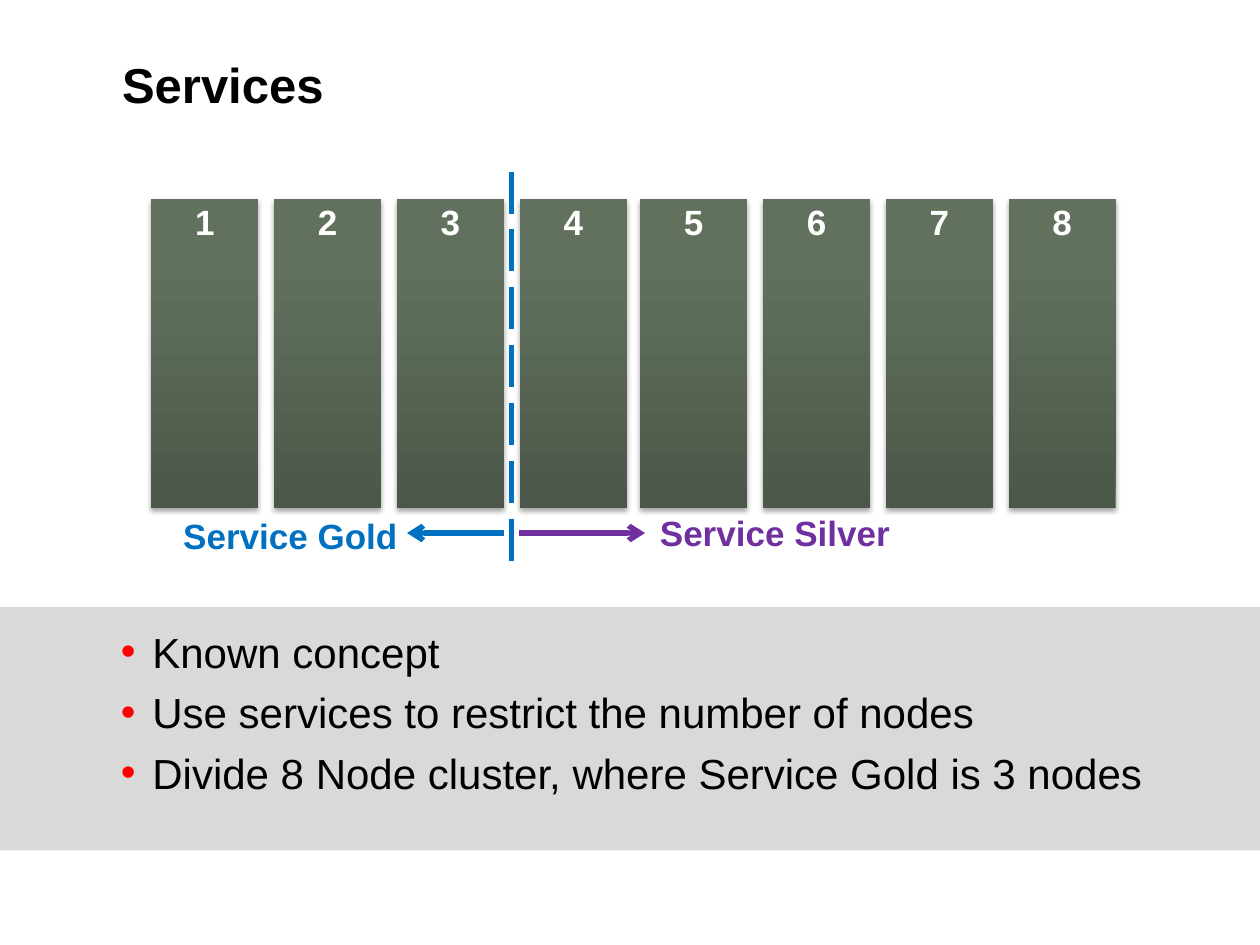
import copy
import dataclasses

import lxml.etree
import pptx
import pptx.dml.color
import pptx.enum.dml
import pptx.enum.shapes
import pptx.enum.text
import pptx.oxml.ns
import pptx.util

Pt = pptx.util.Pt
RGB = pptx.dml.color.RGBColor.from_string
qn = pptx.oxml.ns.qn
Align = pptx.enum.text.PP_ALIGN
Anchor = pptx.enum.text.MSO_ANCHOR
Dash = pptx.enum.dml.MSO_LINE
RECT = pptx.enum.shapes.MSO_SHAPE.RECTANGLE
LINE = pptx.enum.shapes.MSO_CONNECTOR.STRAIGHT


@dataclasses.dataclass(frozen=True)
class Theme:
    font: str = "Arial"
    black: str = "000000"
    white: str = "FFFFFF"
    band: str = "D9D9D9"
    red: str = "FF0000"
    gold: str = "0070C0"
    silver: str = "7030A0"
    shade: tuple = ((0, "4B5748"), (0.8, "62715E"), (1, "62725E"))
    head: int = 28
    body: int = 24
    label: int = 20
    stroke: int = 3


@dataclasses.dataclass(frozen=True)
class Box:
    left: float
    top: float
    width: float
    height: float

    def points(self) -> tuple:
        return Pt(self.left), Pt(self.top), Pt(self.width), Pt(self.height)


@dataclasses.dataclass(frozen=True)
class Rule:
    start: tuple
    end: tuple
    color: str
    dashed: bool = False


@dataclasses.dataclass(frozen=True)
class Label:
    text: str
    box: Box
    color: str


THEME = Theme()
POINTS = (
    "Known concept",
    "Use services to restrict the number of nodes",
    "Divide 8 Node cluster, where Service Gold is 3 nodes",
)
RULES = (
    Rule((292.3, 320.4), (292.3, 92.2), THEME.gold, True),
    Rule((288, 304.6), (232.6, 304.6), THEME.gold),
    Rule((296.6, 304.6), (368.6, 304.6), THEME.silver),
)
LABELS = (
    Label("Service Gold", Box(97.2, 293, 137.5, 28.8), THEME.gold),
    Label("Service Silver", Box(369.4, 291.6, 146.9, 28.8), THEME.silver),
)
NODES = 8
HALF = NODES // 2
STARTS = (86.4, 365.8)
PITCH = 70.2


def add_run(para, text: str, size: int, color: str, bold: bool = True) -> None:
    run = para.add_run()
    run.text = text
    run.font.name = THEME.font
    run.font.size = Pt(size)
    run.font.bold = bold
    run.font.color.rgb = RGB(color)


def no_inset(frame) -> None:
    frame.margin_left = frame.margin_right = Pt(0)
    frame.margin_top = frame.margin_bottom = Pt(0)


def add_title(slide, text: str) -> None:
    title = slide.shapes.title
    title.left, title.top, title.width, title.height = Box(69.8, 31, 596.9, 67.7).points()
    frame = title.text_frame
    no_inset(frame)
    frame.vertical_anchor = Anchor.TOP
    para = frame.paragraphs[0]
    para.alignment = Align.LEFT
    add_run(para, text, THEME.head, THEME.black)


def add_band(slide, box: Box) -> None:
    band = slide.shapes.add_shape(RECT, *box.points())
    band.shadow.inherit = False
    band.fill.solid()
    band.fill.fore_color.rgb = RGB(THEME.band)
    band.line.fill.background()


def add_list(slide, box: Box) -> None:
    frame = slide.shapes.add_textbox(*box.points()).text_frame
    frame.word_wrap = True
    no_inset(frame)
    for i, text in enumerate(POINTS):
        para = frame.add_paragraph() if i else frame.paragraphs[0]
        para.space_before = Pt(5.8 if i else 0)
        props = para._p.get_or_add_pPr()
        props.set("marL", str(Pt(18)))
        props.set("indent", str(-Pt(18)))
        tint = lxml.etree.SubElement(props, qn("a:buClr"))
        lxml.etree.SubElement(tint, qn("a:srgbClr"), val=THEME.red)
        lxml.etree.SubElement(props, qn("a:buFont"), typeface=THEME.font)
        lxml.etree.SubElement(props, qn("a:buChar"), char="•")
        add_run(para, text, THEME.body, THEME.black, False)


def shade_bar(bar) -> None:
    bar.fill.gradient()
    bar.fill.gradient_angle = 90
    stops = bar._element.spPr.find(".//" + qn("a:gsLst"))
    stops.append(copy.deepcopy(stops[0]))
    for stop, (place, color) in zip(bar.fill.gradient_stops, THEME.shade):
        stop.position = place
        stop.color.rgb = RGB(color)


def add_shadow(bar) -> None:
    bar.shadow.inherit = False
    effects = bar._element.spPr.find(qn("a:effectLst"))
    outer = lxml.etree.SubElement(
        effects, qn("a:outerShdw"), blurRad=str(Pt(3.1)), dist=str(Pt(1.8)),
        dir="5400000", rotWithShape="0",
    )
    tint = lxml.etree.SubElement(outer, qn("a:srgbClr"), val=THEME.black)
    lxml.etree.SubElement(tint, qn("a:alpha"), val="35000")


def add_bar(slide, text: str, box: Box) -> None:
    bar = slide.shapes.add_shape(RECT, *box.points())
    shade_bar(bar)
    bar.line.fill.background()
    add_shadow(bar)
    frame = bar.text_frame
    frame.vertical_anchor = Anchor.TOP
    para = frame.paragraphs[0]
    para.alignment = Align.CENTER
    para.line_spacing = 0.9
    add_run(para, text, THEME.label, THEME.white)


def add_rule(slide, rule: Rule) -> None:
    ends = [Pt(n) for n in rule.start + rule.end]
    line = slide.shapes.add_connector(LINE, *ends)
    line.line.color.rgb = RGB(rule.color)
    line.line.width = Pt(THEME.stroke)
    if rule.dashed:
        line.line.dash_style = Dash.LONG_DASH
    else:
        lxml.etree.SubElement(line.line._get_or_add_ln(), qn("a:tailEnd"), type="arrow")
    lxml.etree.SubElement(line._element.spPr, qn("a:effectLst"))


def add_label(slide, label: Label) -> None:
    frame = slide.shapes.add_textbox(*label.box.points()).text_frame
    frame.word_wrap = False
    frame.auto_size = pptx.enum.text.MSO_AUTO_SIZE.SHAPE_TO_FIT_TEXT
    para = frame.paragraphs[0]
    para.alignment = Align.CENTER
    para.line_spacing = 0.9
    add_run(para, label.text, THEME.label, label.color)


def main() -> None:
    deck = pptx.Presentation()
    deck.slide_width, deck.slide_height = Pt(720), Pt(540)
    slide = deck.slides.add_slide(deck.slide_layouts[5])
    add_band(slide, Box(0, 347, 720, 139))
    add_title(slide, "Services")
    add_list(slide, Box(69.1, 357.8, 593.3, 108.7))
    for i in range(NODES):
        left = STARTS[i // HALF] + i % HALF * PITCH
        add_bar(slide, str(i + 1), Box(left, 113.8, 61.2, 176.4))
    for rule in RULES:
        add_rule(slide, rule)
    for label in LABELS:
        add_label(slide, label)
    deck.save("out.pptx")


if __name__ == "__main__":
    main()
